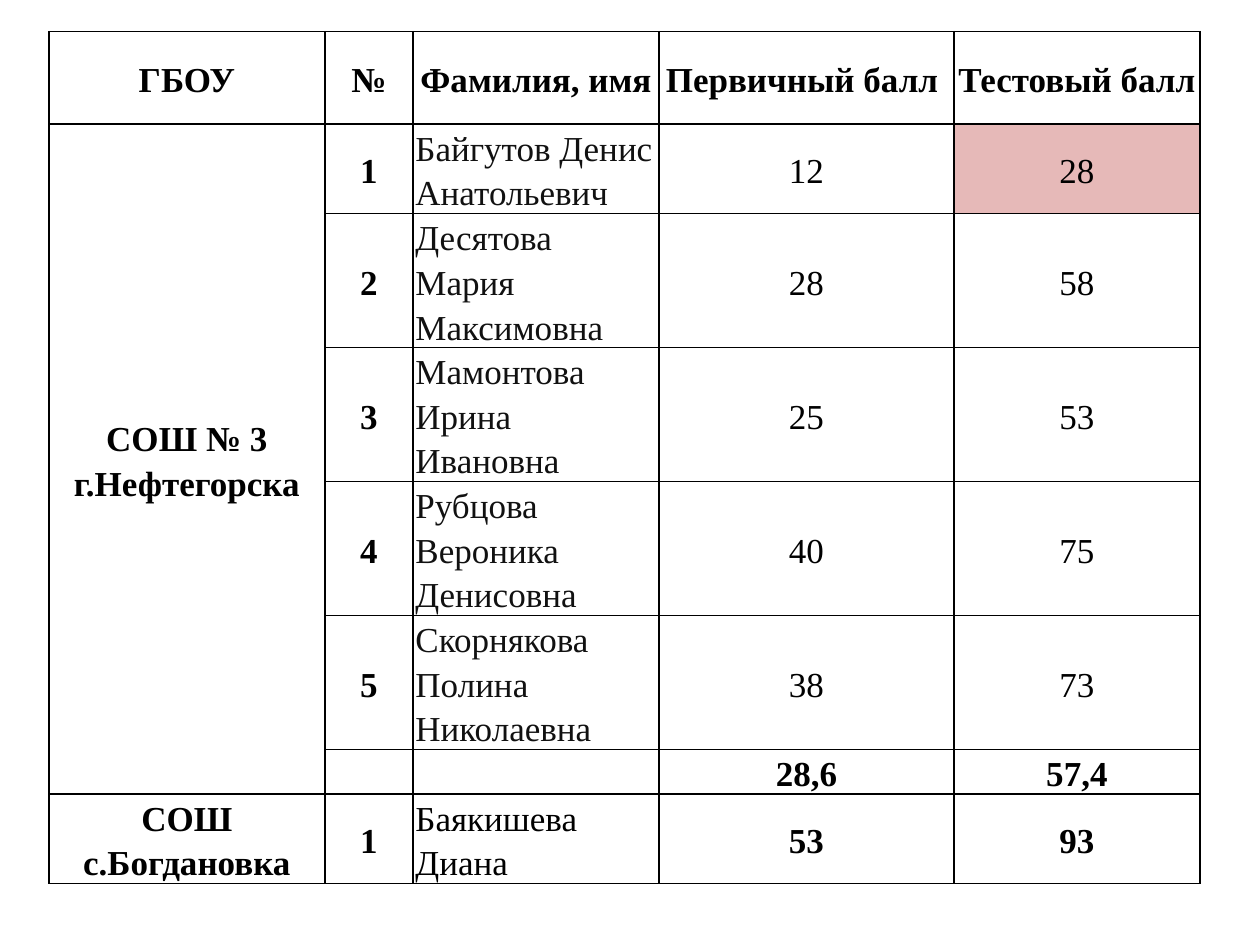
"""Build a slide with a table of exam scores by school."""
from lxml import etree
from pptx import Presentation
from pptx.dml.color import RGBColor
from pptx.enum import text
from pptx.oxml import ns
from pptx.util import Pt

BLACK = RGBColor(0x00, 0x00, 0x00)
GREY = RGBColor(0x11, 0x11, 0x11)
WHITE = RGBColor(0xFF, 0xFF, 0xFF)
PINK = RGBColor(0xE6, 0xB9, 0xB8)
FONT = "Times New Roman"
NAME = 2
LAST = 7

ROWS = [
    ("ГБОУ", "№", "Фамилия, имя", "Первичный балл ", "Тестовый балл"),
    ("СОШ № 3 г.Нефтегорска", "1", "Байгутов Денис Анатольевич", "12", "28"),
    ("", "2", "Десятова Мария Максимовна", "28", "58"),
    ("", "3", "Мамонтова Ирина Ивановна", "25", "53"),
    ("", "4", "Рубцова Вероника Денисовна", "40", "75"),
    ("", "5", "Скорнякова Полина Николаевна", "38", "73"),
    ("", "", "", "28,6", "57,4"),
    ("СОШ с.Богдановка", "1", "Баякишева Диана", "53", "93"),
]
WIDTHS = [157.6, 50.4, 140.6, 168.5, 140.6]
HEIGHTS = [53, 50.8] + [76.5] * 4 + [25.5, 50.8]


def add_edges(cell):
    props = cell._tc.get_or_add_tcPr()
    for side in ("lnL", "lnR", "lnT", "lnB"):
        line = etree.SubElement(props, ns.qn(f"a:{side}"), w=str(Pt(1)))
        fill = etree.SubElement(line, ns.qn("a:solidFill"))
        etree.SubElement(fill, ns.qn("a:srgbClr"), val=str(BLACK))


deck = Presentation()
deck.slide_width, deck.slide_height = Pt(720), Pt(540)
slide = deck.slides.add_slide(deck.slide_layouts[6])

frame = slide.shapes.add_table(
    len(ROWS), len(WIDTHS), Pt(28), Pt(18), Pt(sum(WIDTHS)), Pt(sum(HEIGHTS)))
table = frame.table
table.first_row = table.horz_banding = False
for col, width in zip(table.columns, WIDTHS):
    col.width = Pt(width)
for row, height in zip(table.rows, HEIGHTS):
    row.height = Pt(height)

for r, row in enumerate(ROWS):
    for c, value in enumerate(row):
        cell = table.cell(r, c)
        person = c == NAME and r > 0
        add_edges(cell)
        cell.margin_left = cell.margin_right = Pt(1.4)
        cell.margin_top = cell.margin_bottom = 0
        cell.vertical_anchor = text.MSO_ANCHOR.MIDDLE
        cell.fill.background()
        if person and r < LAST:
            cell.fill.solid()
            cell.fill.fore_color.rgb = WHITE
            cell.vertical_anchor = (
                text.MSO_ANCHOR.TOP if r == 1 else text.MSO_ANCHOR.BOTTOM)
        if not value:
            continue
        para = cell.text_frame.paragraphs[0]
        para.text = value
        para.line_spacing = 1.15
        para.alignment = text.PP_ALIGN.LEFT if person else text.PP_ALIGN.CENTER
        font = para.runs[0].font
        font.name, font.size = FONT, Pt(20)
        font.bold = not person and (c < NAME or r in (0, 6, LAST))
        font.color.rgb = GREY if person and r < LAST else BLACK

table.cell(1, 0).merge(table.cell(6, 0))
low = table.cell(1, 4)
low.fill.solid()
low.fill.fore_color.rgb = PINK

deck.save("out.pptx")
